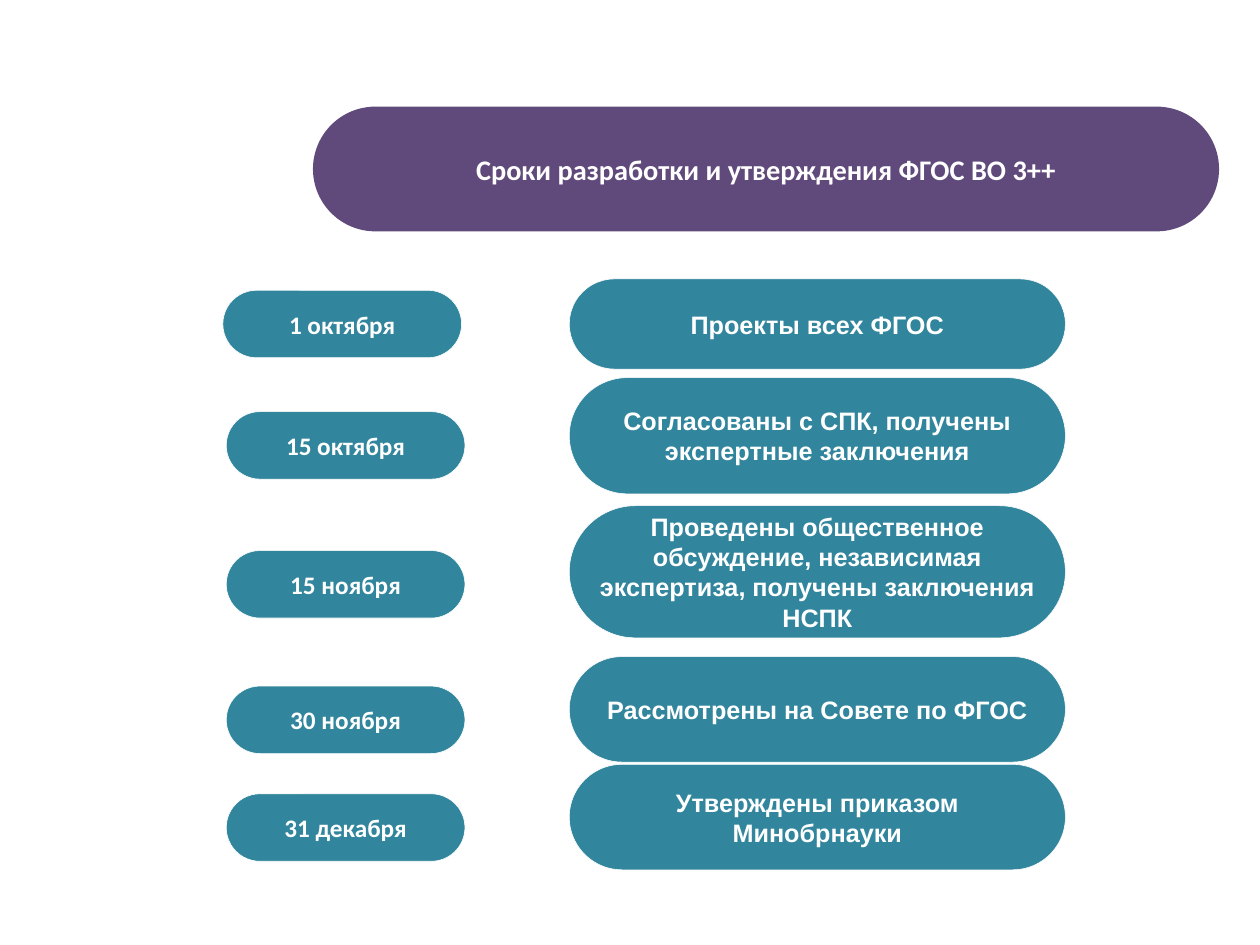
import pptx
import pptx.dml.color
import pptx.enum.shapes
import pptx.enum.text
import pptx.util

Pt = pptx.util.Pt
TINT = {"head": "604A7B", "step": "31859C", "white": "FFFFFF"}
DATE_LEFT, DATE_WIDE, DATE_HIGH = 287.3, 303.1, 85.7
TASK_LEFT, TASK_WIDE = 722.9, 630
HEAD_BOX = (397.4, 135.4, 1150.6, 158.4)

# date, its left and top, then task, its top and height
STEPS = [
    ("1 октября", 283, 368.6, "Проекты всех ФГОС", 354.2, 114.5),
    ("15 октября", DATE_LEFT, 522.7,
     "Согласованы с СПК, получены экспертные заключения", 479.5, 147.6),
    ("15 ноября", DATE_LEFT, 699.1,
     "Проведены общественное обсуждение, независимая экспертиза, "
     "получены заключения НСПК", 642.2, 167.8),
    ("30 ноября", DATE_LEFT, 871.2, "Рассмотрены на Совете по ФГОС", 833.8, 133.9),
    ("31 декабря", DATE_LEFT, 1008, "Утверждены приказом Минобрнауки", 970.6, 133.9),
]


def tint(name):
    return pptx.dml.color.RGBColor.from_string(TINT[name])


def apply(item, style):
    for name, value in style.items():
        setattr(item, name, value)


class Deck:
    """Holds the text style and the current slide."""

    frame = {
        "word_wrap": True,
        "auto_size": pptx.enum.text.MSO_AUTO_SIZE.NONE,
        "vertical_anchor": pptx.enum.text.MSO_ANCHOR.MIDDLE,
        "margin_left": Pt(7.2), "margin_right": Pt(7.2),
        "margin_top": Pt(3.6), "margin_bottom": Pt(3.6),
    }

    def __init__(self, show):
        self.slide = show.slides.add_slide(show.slide_layouts[5])

    def label(self, shape, text, font, size):
        apply(shape.text_frame, self.frame)
        para = shape.text_frame.paragraphs[0]
        para.alignment = pptx.enum.text.PP_ALIGN.CENTER
        run = para.add_run()
        run.text = text
        apply(run.font, {"name": font, "size": Pt(size), "bold": True})
        run.font.color.rgb = tint("white")

    def pill(self, box, fill):
        shape = self.slide.shapes.add_shape(
            pptx.enum.shapes.MSO_SHAPE.ROUNDED_RECTANGLE, *map(Pt, box))
        shape.adjustments[0] = 0.5
        shape.shadow.inherit = False
        shape.fill.solid()
        shape.fill.fore_color.rgb = tint(fill)
        shape.line.fill.background()
        return shape

    def title(self, text, box):
        """Lay the title placeholder over its pill."""
        self.pill(box, "head")
        title = self.slide.shapes.title
        apply(title, dict(zip(("left", "top", "width", "height"), map(Pt, box))))
        title.element.getparent().append(title.element)
        self.label(title, text, "Calibri", 36)

    def step(self, text, box, font):
        shape = self.pill(box, "step")
        shape.line.color.rgb = tint("white")
        shape.line.width = Pt(0.75)
        self.label(shape, text, font, 32)


def main():
    show = pptx.Presentation()
    apply(show, {"slide_width": Pt(1600), "slide_height": Pt(1200)})
    deck = Deck(show)
    deck.title("Сроки разработки и утверждения ФГОС ВО 3++", HEAD_BOX)
    for date, left, top, task, task_top, high in STEPS:
        deck.step(date, (left, top, DATE_WIDE, DATE_HIGH), "Calibri")
        deck.step(task, (TASK_LEFT, task_top, TASK_WIDE, high), "Arial")
    show.save("out.pptx")


if __name__ == "__main__":
    main()
